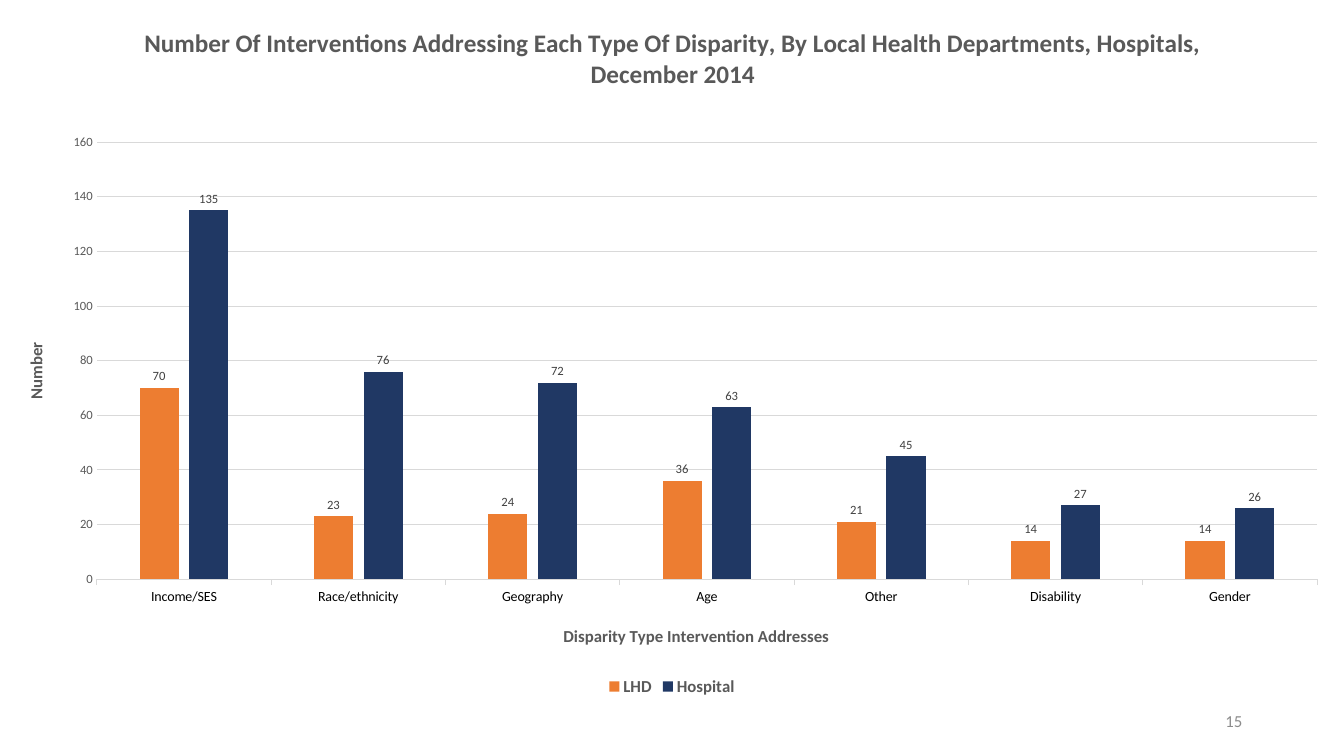
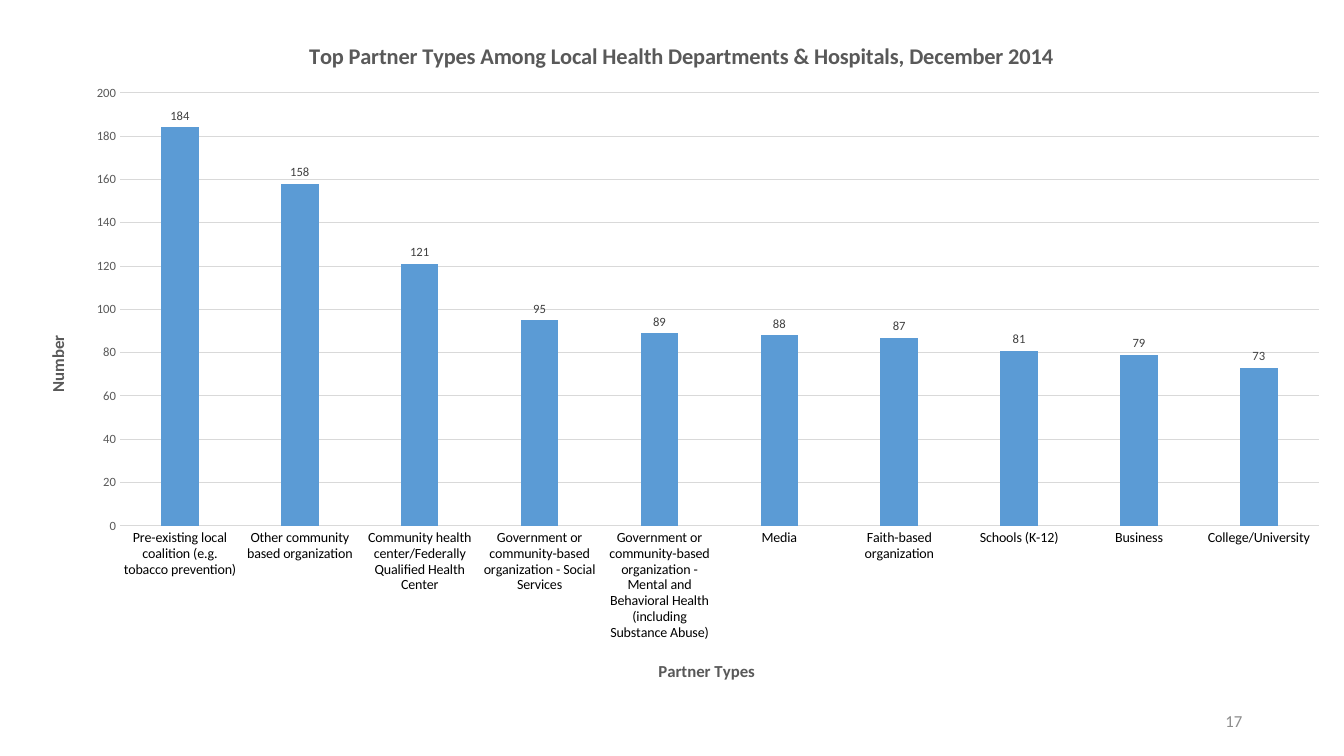
import pptx
import pptx.chart.data
import pptx.dml.color
import pptx.enum.chart
import pptx.enum.text
import pptx.oxml
import pptx.oxml.ns
import pptx.util
from pptx.dml.color import RGBColor

FONT = "Calibri"
BLACK = RGBColor(0x00, 0x00, 0x00)
LABEL_GRAY = RGBColor(0x40, 0x40, 0x40)
TEXT_GRAY = RGBColor(0x59, 0x59, 0x59)
NUMBER_GRAY = RGBColor(0x8C, 0x8C, 0x8C)
LINE_GRAY = RGBColor(0xD9, 0xD9, 0xD9)
ORANGE = RGBColor(0xED, 0x7D, 0x31)
NAVY = RGBColor(0x20, 0x38, 0x64)
BLUE = RGBColor(0x5B, 0x9B, 0xD5)

SLIDE_WIDTH, SLIDE_HEIGHT = 13.33, 7.5
TICK_MARK = pptx.enum.chart.XL_TICK_MARK


def style_font(font, size, color, bold=False):
    font.name = FONT
    font.size = pptx.util.Pt(size)
    font.bold = bold
    font.color.rgb = color


def style_line(line_format):
    line_format.color.rgb = LINE_GRAY
    line_format.width = pptx.util.Pt(0.75)


def set_layout(element, index, x, y, width=None, height=None):
    """Place a chart part by shares of the chart; with a size, it is the inner plot."""
    tag = pptx.oxml.ns.qn("c:layout")
    for old_layout in element.findall(tag):
        element.remove(old_layout)
    values = [("xMode", "edge"), ("yMode", "edge"), ("x", x), ("y", y)]
    if width is not None:
        values = [("layoutTarget", "inner")] + values + [("w", width), ("h", height)]
    settings = "".join(f'<c:{name} val="{value}"/>' for name, value in values)
    namespace = pptx.oxml.ns.nsdecls("c")
    element.insert(index, pptx.oxml.parse_xml(
        f"<c:layout {namespace}><c:manualLayout>{settings}</c:manualLayout></c:layout>"))


def set_rotation(element, degrees):
    body = element.find(".//" + pptx.oxml.ns.qn("a:bodyPr"))
    body.set("rot", str(degrees * 60000))
    body.set("vert", "horz")


def write_title(title, text, size, position):
    title.text_frame.text = text
    style_font(title.text_frame.paragraphs[0].font, size, TEXT_GRAY, bold=True)
    set_layout(title._element, 1, *position)


def style_category_axis(axis, title, position, tick_mark):
    write_title(axis.axis_title, title, 12, position)
    axis.major_tick_mark = tick_mark
    axis.minor_tick_mark = TICK_MARK.NONE
    style_line(axis.format.line)
    style_font(axis.tick_labels.font, 10, BLACK)
    set_rotation(axis._element.find(pptx.oxml.ns.qn("c:txPr")), 0)


def style_value_axis(axis, maximum, position):
    write_title(axis.axis_title, "Number", 12, position)
    set_rotation(axis.axis_title._element, -90)
    axis.minimum_scale, axis.maximum_scale, axis.major_unit = 0, maximum, 20
    axis.major_tick_mark = axis.minor_tick_mark = TICK_MARK.NONE
    axis.format.line.fill.background()
    style_line(axis.major_gridlines.format.line)
    axis.tick_labels.number_format = "0"
    axis.tick_labels.number_format_is_linked = False
    style_font(axis.tick_labels.font, 9, TEXT_GRAY)


def style_series(series, color):
    series.format.fill.solid()
    series.format.fill.fore_color.rgb = color
    series.invert_if_negative = False
    labels = series.data_labels
    labels.show_value = True
    labels.position = pptx.enum.chart.XL_LABEL_POSITION.OUTSIDE_END
    style_font(labels.font, 9, LABEL_GRAY)


def add_column_chart(slide, frame, categories, series_list, plot_box):
    data = pptx.chart.data.CategoryChartData()
    data.categories = categories
    for name, values, _ in series_list:
        data.add_series(name, values)
    chart = slide.shapes.add_chart(
        pptx.enum.chart.XL_CHART_TYPE.COLUMN_CLUSTERED,
        *map(pptx.util.Inches, frame), data).chart
    style_font(chart.font, 10, BLACK)
    plot = chart.plots[0]
    plot.gap_width, plot.overlap = 219, -27
    plot.vary_by_categories = False
    for series, (_, _, color) in zip(plot.series, series_list):
        style_series(series, color)
    set_layout(chart._chartSpace.chart.plotArea, 0, *plot_box)
    chart.has_legend = False
    return chart


def add_legend(chart):
    chart.has_legend = True
    chart.legend.position = pptx.enum.chart.XL_LEGEND_POSITION.BOTTOM
    chart.legend.include_in_layout = False
    style_font(chart.legend.font, 12, TEXT_GRAY, bold=True)


def add_slide_number(slide, number):
    box = slide.shapes.add_textbox(*map(pptx.util.Inches, (9.42, 6.95, 3, 0.4)))
    frame = box.text_frame
    frame.word_wrap = True
    frame.vertical_anchor = pptx.enum.text.MSO_ANCHOR.MIDDLE
    frame.text = str(number)
    paragraph = frame.paragraphs[0]
    paragraph.alignment = pptx.enum.text.PP_ALIGN.RIGHT
    style_font(paragraph.font, 12, NUMBER_GRAY)


def add_numbered_slide(presentation, number):
    slide = presentation.slides.add_slide(presentation.slide_layouts.get_by_name("Blank"))
    add_slide_number(slide, number)
    return slide


def build_disparity_slide(presentation):
    slide = add_numbered_slide(presentation, 15)
    chart = add_column_chart(
        slide, (0, 0, SLIDE_WIDTH, 6.95),
        ["Income/SES", "Race/ethnicity", "Geography", "Age", "Other", "Disability", "Gender"],
        [("LHD", (70, 23, 24, 36, 21, 14, 14), ORANGE),
         ("Hospital", (135, 76, 72, 63, 45, 27, 26), NAVY)],
        plot_box=(0.072, 0.203, 0.908, 0.624))
    write_title(
        chart.chart_title,
        "Number Of Interventions Addressing Each Type Of Disparity, "
        "By Local Health Departments, Hospitals, December 2014", 18, (0.104, 0.03))
    style_category_axis(chart.category_axis, "Disparity Type Intervention Addresses",
                        (0.417, 0.887), TICK_MARK.OUTSIDE)
    style_value_axis(chart.value_axis, 160, (0.016, 0.484))
    add_legend(chart)


def build_partner_slide(presentation):
    slide = add_numbered_slide(presentation, 17)
    chart = add_column_chart(
        slide, (0.22, 0.16, 13.11, 6.8),
        ["Pre-existing local coalition (e.g. tobacco prevention)",
         "Other community based organization",
         "Community health center/Federally Qualified Health Center",
         "Government or community-based organization - Social Services",
         "Government or community-based organization - Mental and Behavioral Health "
         "(including Substance Abuse)",
         "Media", "Faith-based organization", "Schools (K-12)", "Business",
         "College/University"],
        [("Series 1", (184, 158, 121, 95, 89, 88, 87, 81, 79, 73), BLUE)],
        plot_box=(0.074, 0.112, 0.907, 0.632))
    write_title(
        chart.chart_title,
        "Top Partner Types Among Local Health Departments & Hospitals, December 2014",
        16, (0.214, 0.03))
    style_category_axis(chart.category_axis, "Partner Types", (0.479, 0.935), TICK_MARK.NONE)
    style_value_axis(chart.value_axis, 200, (0.016, 0.461))


def main():
    presentation = pptx.Presentation()
    presentation.slide_width = pptx.util.Inches(SLIDE_WIDTH)
    presentation.slide_height = pptx.util.Inches(SLIDE_HEIGHT)
    build_disparity_slide(presentation)
    build_partner_slide(presentation)
    presentation.save("out.pptx")


if __name__ == "__main__":
    main()
